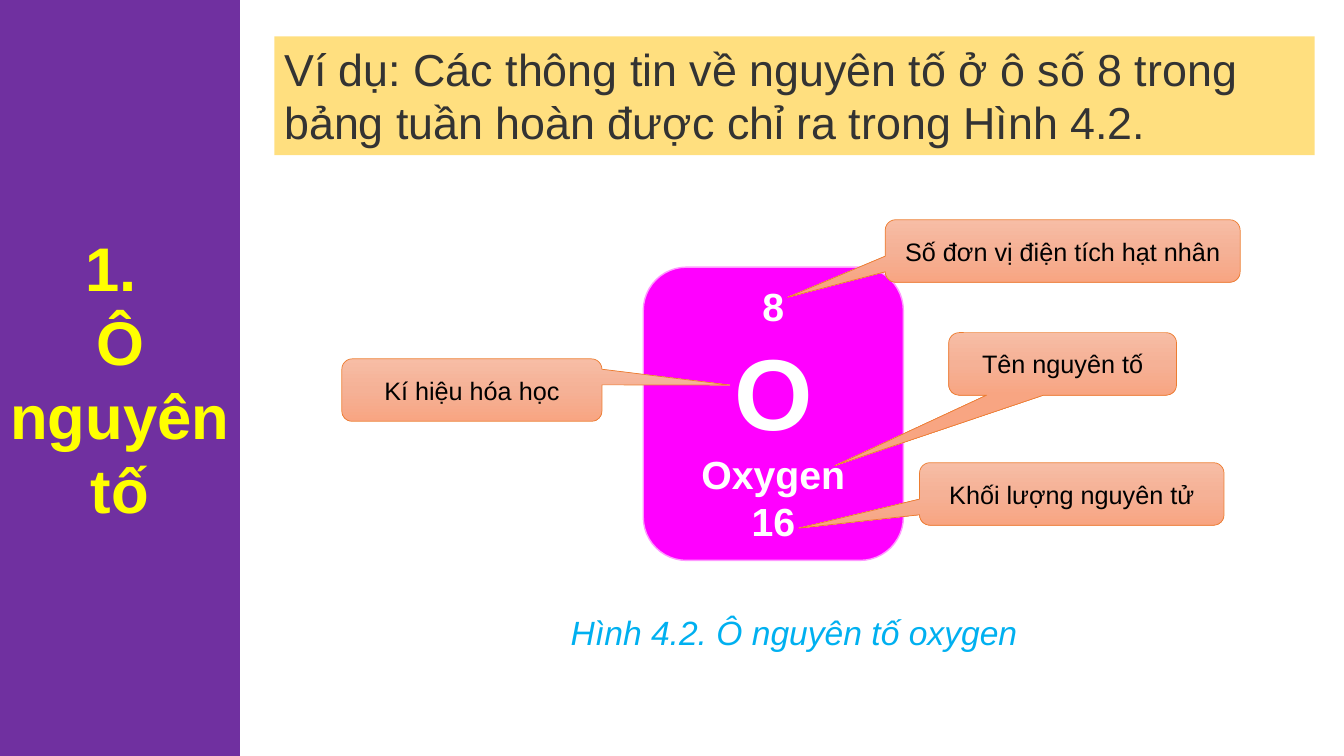
from copy import deepcopy
from dataclasses import dataclass

from lxml.etree import SubElement
from pptx import Presentation
from pptx.dml.color import RGBColor
from pptx.enum.shapes import MSO_SHAPE
from pptx.enum.text import MSO_ANCHOR, MSO_AUTO_SIZE, PP_ALIGN
from pptx.oxml.ns import qn
from pptx.shapes.autoshape import Shape
from pptx.slide import Slide
from pptx.util import Inches, Pt


@dataclass(frozen=True)
class Theme:
    font: str = "Arial"
    sidebar: str = "7030A0"
    sidebar_text: str = "FFFF00"
    banner: str = "FFC000"
    banner_text: str = "333333"
    cell: str = "FF00FF"
    cell_edge: str = "FF99FF"
    cell_text: str = "FFFFFF"
    callout: tuple[str, ...] = ("F7BDA5", "F5B196", "F8A582")
    callout_edge: str = "ED7D31"
    callout_text: str = "000000"
    caption_text: str = "00B0F0"
    sidebar_size: int = 44
    banner_size: int = 32
    cell_size: int = 28
    symbol_size: int = 72
    callout_size: int = 18
    caption_size: int = 24


@dataclass(frozen=True)
class Box:
    left: float
    top: float
    width: float
    height: float

    def emu(self) -> list[int]:
        return [Inches(v) for v in (self.left, self.top, self.width, self.height)]


@dataclass(frozen=True)
class Line:
    """One paragraph of text."""
    text: str
    size: int
    color: str
    bold: bool = False
    italic: bool = False


@dataclass(frozen=True)
class Callout:
    """A label whose pointer ends at (tip_x, tip_y) on the slide."""
    text: str
    box: Box
    tip_x: float
    tip_y: float


THEME = Theme()
LABEL_HEIGHT = 0.62

CALLOUTS = [
    Callout("Số đơn vị điện tích hạt nhân", Box(8.78, 2.18, 3.52, LABEL_HEIGHT), 7.81, 2.95),
    Callout("Khối lượng nguyên tử", Box(9.12, 4.59, 3.02, LABEL_HEIGHT), 7.92, 5.24),
    Callout("Tên nguyên tố", Box(9.41, 3.3, 2.26, LABEL_HEIGHT), 8.28, 4.62),
    Callout("Kí hiệu hóa học", Box(3.39, 3.56, 2.58, LABEL_HEIGHT), 7.24, 3.82),
]


def write(shape: Shape, lines: list[Line], align: PP_ALIGN = PP_ALIGN.CENTER,
          anchor: MSO_ANCHOR = MSO_ANCHOR.MIDDLE) -> None:
    frame = shape.text_frame
    frame.word_wrap = True
    frame.vertical_anchor = anchor
    for index, line in enumerate(lines):
        paragraph = frame.add_paragraph() if index else frame.paragraphs[0]
        paragraph.alignment = align
        run = paragraph.add_run()
        run.text = line.text
        run.font.name = THEME.font
        run.font.size = Pt(line.size)
        run.font.bold = line.bold
        run.font.italic = line.italic
        run.font.color.rgb = RGBColor.from_string(line.color)


def add_panel(slide: Slide, kind: MSO_SHAPE, box: Box, fill: str | None = None,
              edge: str | None = None, edge_width: float = 1) -> Shape:
    panel = slide.shapes.add_shape(kind, *box.emu())
    panel.shadow.inherit = False
    if fill:
        panel.fill.solid()
        panel.fill.fore_color.rgb = RGBColor.from_string(fill)
    if edge:
        panel.line.color.rgb = RGBColor.from_string(edge)
        panel.line.width = Pt(edge_width)
    else:
        panel.line.fill.background()
    return panel


def fill_downward(shape: Shape, colors: tuple[str, ...]) -> None:
    """Fill with evenly spaced colours running from top to bottom."""
    shape.fill.gradient()
    shape.fill.gradient_angle = 270
    stops = shape._element.spPr.find(qn("a:gradFill")).find(qn("a:gsLst"))
    while len(stops) < len(colors):
        stops.append(deepcopy(stops[0]))
    for index, (stop, color) in enumerate(zip(shape.fill.gradient_stops, colors)):
        stop.position = index / (len(colors) - 1)
        stop.color.rgb = RGBColor.from_string(color)


def add_callout(slide: Slide, callout: Callout) -> None:
    box = callout.box
    label = add_panel(slide, MSO_SHAPE.ROUNDED_RECTANGULAR_CALLOUT, box,
                      edge=THEME.callout_edge, edge_width=0.5)
    label.adjustments[0] = (callout.tip_x - box.left) / box.width - 0.5
    label.adjustments[1] = (callout.tip_y - box.top) / box.height - 0.5
    fill_downward(label, THEME.callout)
    write(label, [Line(callout.text, THEME.callout_size, THEME.callout_text)])


def add_caption(slide: Slide) -> None:
    caption = slide.shapes.add_textbox(*Box(3.19, 6.07, 9.37, 0.4).emu())
    frame = caption.text_frame
    frame.margin_left = frame.margin_right = frame.margin_top = frame.margin_bottom = 0
    frame.auto_size = MSO_AUTO_SIZE.SHAPE_TO_FIT_TEXT
    write(caption, [Line("Hình 4.2. Ô nguyên tố oxygen", THEME.caption_size,
                         THEME.caption_text, italic=True)], anchor=MSO_ANCHOR.TOP)


def add_sidebar(slide: Slide) -> None:
    sidebar = add_panel(slide, MSO_SHAPE.RECTANGLE, Box(0, 0, 2.38, 7.5), THEME.sidebar)
    write(sidebar, [Line(text, THEME.sidebar_size, THEME.sidebar_text, bold=True)
                    for text in ("1. ", "Ô nguyên tố")])


def add_banner(slide: Slide) -> None:
    banner = add_panel(slide, MSO_SHAPE.RECTANGLE, Box(2.72, 0.36, 10.32, 1.18), THEME.banner)
    color = banner._element.spPr.find(qn("a:solidFill"))[0]
    SubElement(color, qn("a:alpha")).set("val", "50000")
    banner.text_frame.auto_size = MSO_AUTO_SIZE.SHAPE_TO_FIT_TEXT
    write(banner, [Line("Ví dụ: Các thông tin về nguyên tố ở ô số 8 trong bảng tuần hoàn "
                        "được chỉ ra trong Hình 4.2.", THEME.banner_size, THEME.banner_text)],
          PP_ALIGN.LEFT, MSO_ANCHOR.TOP)


def add_element_cell(slide: Slide) -> None:
    cell = add_panel(slide, MSO_SHAPE.ROUNDED_RECTANGLE, Box(6.38, 2.65, 2.58, 2.91),
                     THEME.cell, THEME.cell_edge)
    rows = [("8", THEME.cell_size), ("O", THEME.symbol_size),
            ("Oxygen", THEME.cell_size), ("16", THEME.cell_size)]
    write(cell, [Line(text, size, THEME.cell_text, bold=True) for text, size in rows])


def main() -> None:
    deck = Presentation()
    deck.slide_width, deck.slide_height = Inches(13.33), Inches(7.5)
    slide = deck.slides.add_slide(deck.slide_layouts[6])

    # Caption, section title and introduction
    add_caption(slide)
    add_sidebar(slide)
    add_banner(slide)

    # Element cell with its labels
    add_element_cell(slide)
    for callout in CALLOUTS:
        add_callout(slide, callout)

    deck.save("out.pptx")


if __name__ == "__main__":
    main()
